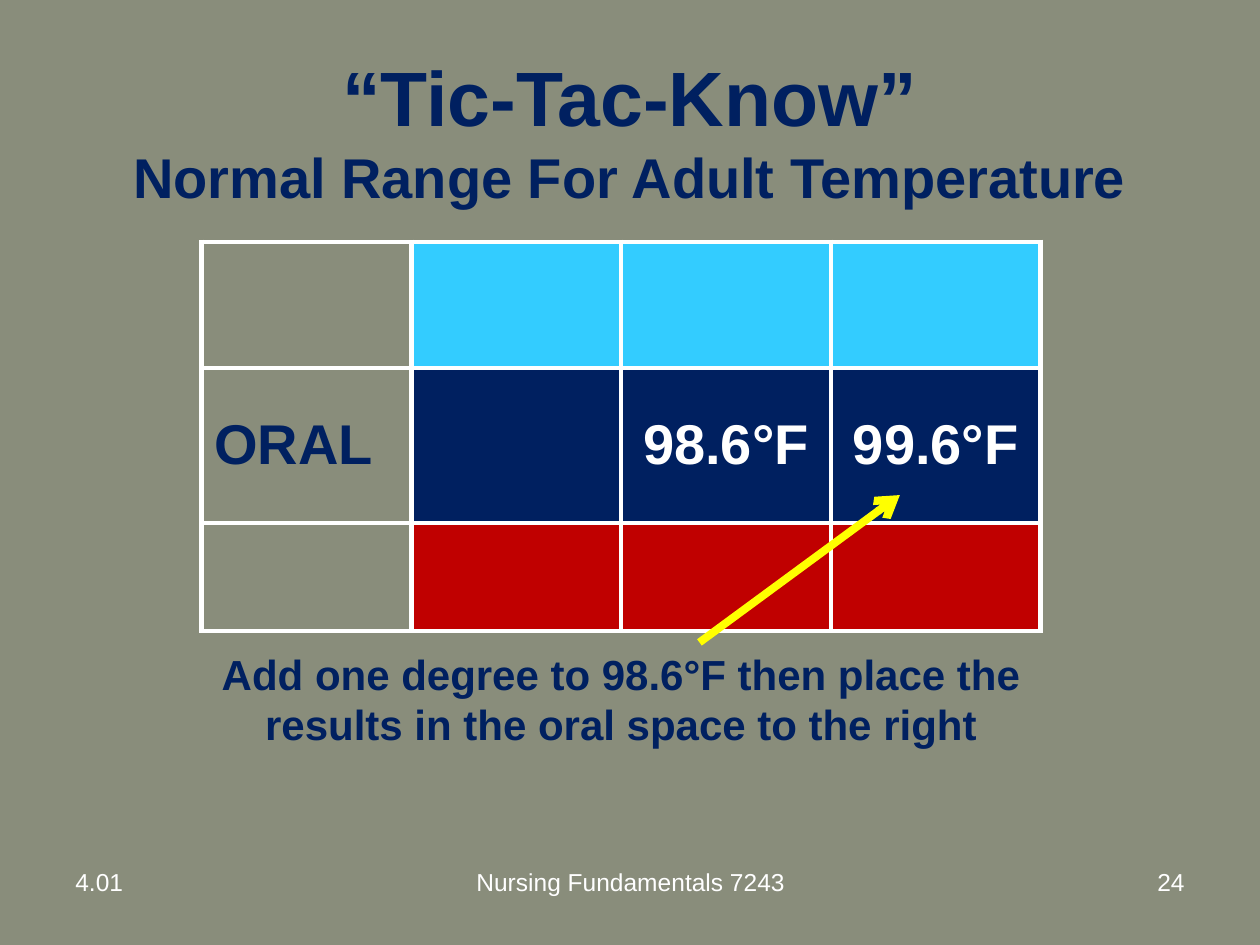
import dataclasses
import typing

import lxml.etree
import pptx
import pptx.dml.color
import pptx.enum.shapes
import pptx.enum.text
import pptx.oxml
import pptx.oxml.ns
import pptx.util

Cm = pptx.util.Cm
Pt = pptx.util.Pt
ALIGN = pptx.enum.text.PP_ALIGN
ANCHOR = pptx.enum.text.MSO_ANCHOR
NAVY, WHITE, YELLOW = "002060", "FFFFFF", "FFFF00"
SKY, RED, OLIVE = "33CCFF", "C00000", "898D7B"


@dataclasses.dataclass
class Line:
    text: str
    size: float
    color: str = NAVY
    bold: bool = True


@dataclasses.dataclass
class Label:
    left: float
    top: float
    width: float
    height: float
    lines: list[Line]
    align: typing.Any = ALIGN.CENTER
    anchor: typing.Any = ANCHOR.TOP


@dataclasses.dataclass
class GridRow:
    height: float
    fill: str
    texts: tuple[str, ...] = ("", "", "", "")


LABELS = [
    Label(1.27, 0.76, 22.86, 3.71,
          [Line("“Tic-Tac-Know”", 44), Line("Normal Range For Adult Temperature", 32)],
          anchor=ANCHOR.MIDDLE),
    Label(4.06, 12.95, 16.92, 2.31,
          [Line("Add one degree to 98.6°F then place the results in the oral space to the right", 24)]),
]
FOOTERS = [
    (1.27, 5.92, "4.01", ALIGN.LEFT),
    (8.69, 8.05, "Nursing Fundamentals 7243", ALIGN.CENTER),
    (18.21, 5.92, "24", ALIGN.RIGHT),
]
GRID_ROWS = [
    GridRow(2.54, SKY),
    GridRow(3.12, NAVY, ("ORAL", "", "98.6°F", "99.6°F")),
    GridRow(2.18, RED),
]


def rgb(color: str) -> pptx.dml.color.RGBColor:
    return pptx.dml.color.RGBColor.from_string(color)


def write_lines(paragraph, lines: list[Line], align) -> None:
    paragraph.alignment = align
    for index, line in enumerate(lines):
        if index:
            paragraph.add_line_break()
        run = paragraph.add_run()
        run.text = line.text
        formats = {"name": "Arial", "size": Pt(line.size), "bold": line.bold}
        for name, value in formats.items():
            setattr(run.font, name, value)
        run.font.color.rgb = rgb(line.color)


def draw_label(slide, label: Label) -> None:
    box = slide.shapes.add_textbox(
        Cm(label.left), Cm(label.top), Cm(label.width), Cm(label.height))
    for name, value in {"word_wrap": True, "vertical_anchor": label.anchor}.items():
        setattr(box.text_frame, name, value)
    write_lines(box.text_frame.paragraphs[0], label.lines, label.align)


def draw_cell_borders(cell, color: str, width: float) -> None:
    properties = cell._tc.get_or_add_tcPr()
    for index, side in enumerate(("lnL", "lnR", "lnT", "lnB")):
        border = pptx.oxml.parse_xml(
            f'<a:{side} {pptx.oxml.ns.nsdecls("a")} w="{Pt(width)}">'
            f'<a:solidFill><a:srgbClr val="{color}"/></a:solidFill></a:{side}>')
        properties.insert(index, border)


def draw_grid(slide, left: float, top: float, column_width: float, rows: list[GridRow]) -> None:
    columns = len(rows[0].texts)
    table = slide.shapes.add_table(
        len(rows), columns, Cm(left), Cm(top), Cm(column_width * columns),
        Cm(sum(row.height for row in rows))).table
    for name in ("first_row", "horz_banding"):
        setattr(table, name, False)
    for column in table.columns:
        column.width = Cm(column_width)
    for row_index, row in enumerate(rows):
        table.rows[row_index].height = Cm(row.height)
        for column_index, text in enumerate(row.texts):
            cell = table.cell(row_index, column_index)
            cell.vertical_anchor = ANCHOR.MIDDLE
            is_header = column_index == 0
            if is_header:
                cell.fill.background()
            else:
                cell.fill.solid()
                cell.fill.fore_color.rgb = rgb(row.fill)
            draw_cell_borders(cell, WHITE, 3)
            if text:
                write_lines(cell.text_frame.paragraphs[0],
                            [Line(text, 32, NAVY if is_header else WHITE)],
                            ALIGN.LEFT if is_header else ALIGN.CENTER)


def draw_arrow(slide, start: tuple[float, float], end: tuple[float, float]) -> None:
    arrow = slide.shapes.add_connector(
        pptx.enum.shapes.MSO_CONNECTOR.STRAIGHT, *map(Cm, start + end))
    arrow.line.color.rgb = rgb(YELLOW)
    arrow.line.width = Pt(4.5)
    qualified = pptx.oxml.ns.qn
    lxml.etree.SubElement(arrow.line._get_or_add_ln(), qualified("a:tailEnd"), type="arrow")
    lxml.etree.SubElement(arrow._element.spPr, qualified("a:effectLst"))


def main() -> None:
    """Build the adult oral temperature slide."""
    presentation = pptx.Presentation()
    presentation.slide_width, presentation.slide_height = Cm(25.4), Cm(19.05)
    slide = presentation.slides.add_slide(presentation.slide_layouts[6])
    slide.background.fill.solid()
    slide.background.fill.fore_color.rgb = rgb(OLIVE)
    draw_grid(slide, 4.06, 4.88, 4.23, GRID_ROWS)
    for label in LABELS:
        draw_label(slide, label)
    draw_arrow(slide, (14.1, 12.95), (18.14, 9.98))
    for left, width, text, align in FOOTERS:
        draw_label(slide, Label(left, 17.35, width, 1.32, [Line(text, 14, WHITE, False)], align))
    presentation.save("out.pptx")


if __name__ == "__main__":
    main()
